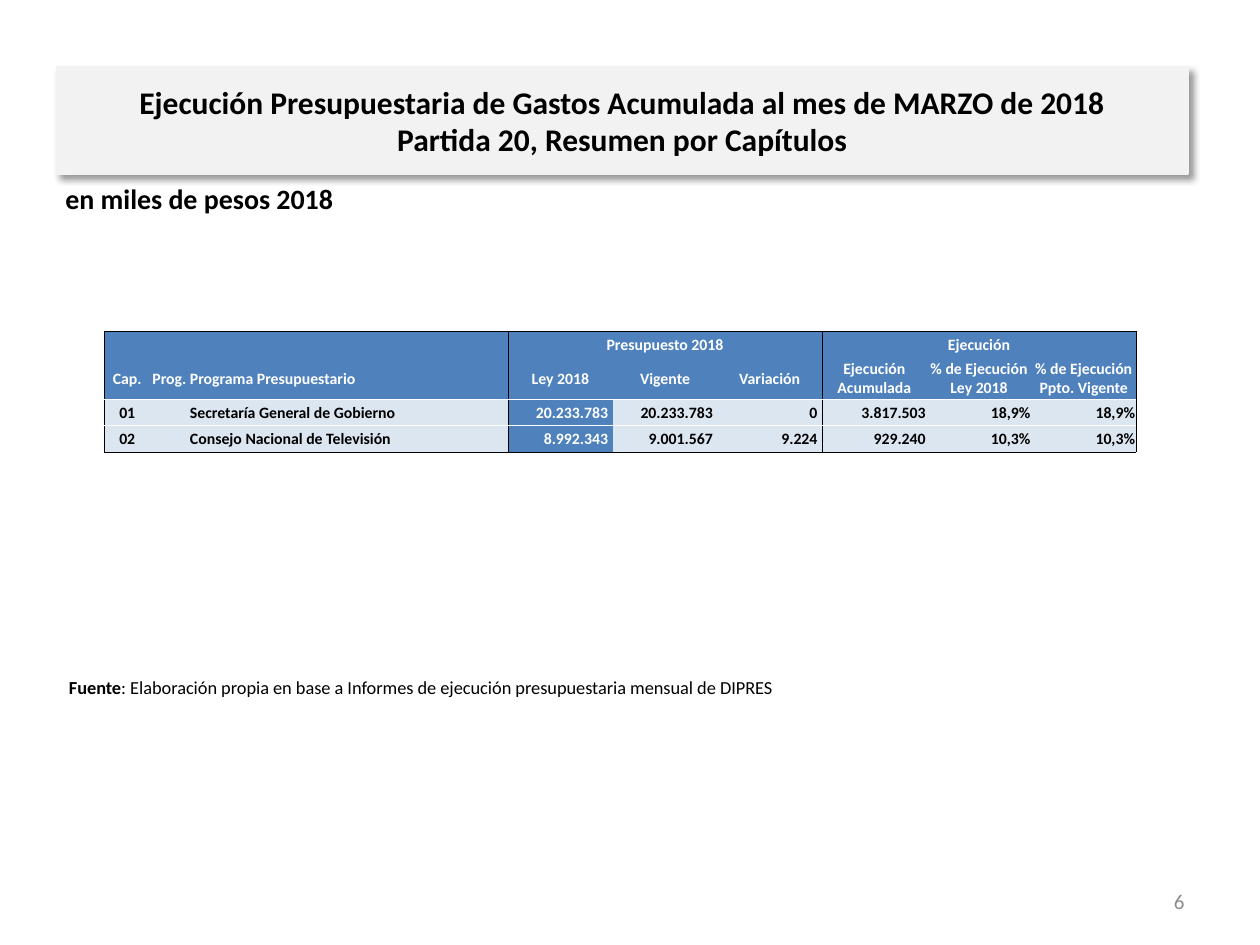
from lxml import etree
from pptx import Presentation
from pptx.dml.color import RGBColor
from pptx.enum.shapes import MSO_SHAPE as Shape
from pptx.enum.text import MSO_ANCHOR as Anchor, PP_ALIGN as Align
from pptx.oxml import parse_xml
from pptx.oxml.ns import nsdecls, qn
from pptx.util import Cm, Pt

FONT = "Calibri"
BLACK, WHITE, GREY = "000000", "FFFFFF", "8C8C8C"
PANEL, BLUE, PALE = "F2F2F2", "4F81BD", "DCE6F1"

COLUMN_WIDTHS = [0.91, 0.79, 6.43] + [2.11] * 6
ROW_HEIGHTS = [0.53, 0.84, 0.53, 0.53]
GROUP_STARTS, GROUP_ENDS = (0, 3, 6), (2, 5, 8)
LAW_COLUMN = 3
ROWS = [
    ["", "", "", "Presupuesto 2018", "", "", "Ejecución", "", ""],
    ["Cap.", "Prog.", "Programa Presupuestario", "Ley 2018", "Vigente", "Variación",
     "Ejecución Acumulada", "% de Ejecución Ley 2018", "% de Ejecución Ppto. Vigente"],
    ["01", "", "Secretaría General de Gobierno", "20.233.783 ", "20.233.783 ", "0 ",
     "3.817.503", "18,9%", "18,9%"],
    ["02", "", "Consejo Nacional de Televisión", "8.992.343 ", "9.001.567 ", "9.224 ",
     "929.240", "10,3%", "10,3%"],
]
HEADER_ROWS = 2


def color(value):
    return RGBColor.from_string(value)


def format_run(run, size, value=BLACK, bold=False):
    run.font.name = FONT
    run.font.size = Pt(size)
    run.font.bold = bold
    run.font.color.rgb = color(value)


def add_title(slide, left, top, width, height):
    shape = slide.shapes.add_shape(Shape.RECTANGLE, Cm(left), Cm(top), Cm(width), Cm(height))
    shape.fill.solid()
    shape.fill.fore_color.rgb = color(PANEL)
    shape.line.color.rgb = color(PANEL)
    shape.line.width = Pt(0.75)
    # Soft shadow towards the lower right
    shape._element.spPr.append(parse_xml(
        f'<a:effectLst {nsdecls("a")}>'
        f'<a:outerShdw blurRad="{Pt(4)}" dist="{Pt(3)}" dir="2700000" algn="tl" rotWithShape="0">'
        f'<a:srgbClr val="{BLACK}"><a:alpha val="40000"/></a:srgbClr>'
        '</a:outerShdw></a:effectLst>'))
    frame = shape.text_frame
    frame.word_wrap = True
    frame.vertical_anchor = Anchor.MIDDLE
    frame.text = ("Ejecución Presupuestaria de Gastos Acumulada al mes de MARZO de 2018\v"
                  "Partida 20, Resumen por Capítulos")
    paragraph = frame.paragraphs[0]
    paragraph.alignment = Align.CENTER
    for run in paragraph.runs:
        format_run(run, 18, bold=True)


def add_label(slide, left, top, width, height, parts, size, value=BLACK,
              align=Align.LEFT, anchor=Anchor.TOP):
    """Place one line of text made of (text, bold) parts."""
    box = slide.shapes.add_textbox(Cm(left), Cm(top), Cm(width), Cm(height))
    frame = box.text_frame
    frame.word_wrap = True
    frame.vertical_anchor = anchor
    paragraph = frame.paragraphs[0]
    paragraph.alignment = align
    for text, bold in parts:
        run = paragraph.add_run()
        run.text = text
        format_run(run, size, value, bold)


def set_borders(cell, row, column):
    last = len(ROWS) - 1
    sides = {
        "lnL": BLACK if column in GROUP_STARTS else None,
        "lnR": BLACK if column in GROUP_ENDS or cell.is_merge_origin else None,
        "lnT": BLACK if row == 0 else WHITE if row >= HEADER_ROWS else None,
        "lnB": BLACK if row == last else WHITE if row > 0 else None,
    }
    properties = cell._tc.get_or_add_tcPr()
    for side, value in sides.items():
        line = etree.SubElement(properties, qn(f"a:{side}"), w=str(Pt(0.5)))
        if value:
            fill = etree.SubElement(line, qn("a:solidFill"))
            etree.SubElement(fill, qn("a:srgbClr"), val=value)
        else:
            etree.SubElement(line, qn("a:noFill"))


def cell_alignment(row, column):
    if column == 2:
        return Align.LEFT if row < HEADER_ROWS else Align.JUSTIFY
    if row < HEADER_ROWS or column < 2:
        return Align.CENTER
    return Align.RIGHT


def fill_cell(cell, row, column, text):
    dark = row < HEADER_ROWS or column == LAW_COLUMN
    set_borders(cell, row, column)
    cell.fill.solid()
    cell.fill.fore_color.rgb = color(BLUE if dark else PALE)
    cell.margin_left = cell.margin_right = cell.margin_top = Cm(0.02)
    cell.margin_bottom = 0
    cell.vertical_anchor = Anchor.MIDDLE
    paragraph = cell.text_frame.paragraphs[0]
    paragraph.alignment = cell_alignment(row, column)
    if text:
        paragraph.text = text
        format_run(paragraph.runs[0], 9, WHITE if dark else BLACK, bold=True)
    else:
        # Keeps an empty cell from stretching its row
        paragraph._p.get_or_add_endParaRPr().set("sz", "900")


def add_budget_table(slide, left, top, width, height):
    table = slide.shapes.add_table(len(ROWS), len(COLUMN_WIDTHS), Cm(left), Cm(top),
                                   Cm(width), Cm(height)).table
    table.first_row = table.horz_banding = False
    for column, size in zip(table.columns, COLUMN_WIDTHS):
        column.width = Cm(size)
    for row, size in zip(table.rows, ROW_HEIGHTS):
        row.height = Cm(size)
    # Group headings span three columns each
    for start in GROUP_STARTS[1:]:
        table.cell(0, start).merge(table.cell(0, start + 2))
    for row, texts in enumerate(ROWS):
        for column, text in enumerate(texts):
            fill_cell(table.cell(row, column), row, column, text)


def main():
    presentation = Presentation()
    presentation.slide_width, presentation.slide_height = Cm(25.4), Cm(19.05)
    slide = presentation.slides.add_slide(presentation.slide_layouts[6])

    add_title(slide, 1.14, 1.35, 22.81, 2.16)
    # Page number
    add_label(slide, 18.2, 17.66, 5.93, 1.01, [("6", False)], 12, GREY,
              Align.RIGHT, Anchor.MIDDLE)
    # Source note
    add_label(slide, 1.14, 13.51, 23.34, 1.01,
              [("Fuente", True),
               (": Elaboración propia en base a Informes de ejecución presupuestaria "
                "mensual de DIPRES", False)], 10.5)
    # Unit of the amounts
    add_label(slide, 1.07, 3.53, 22.86, 1.27, [("en miles de pesos 2018", True)], 16)
    add_budget_table(slide, 2.11, 6.68, sum(COLUMN_WIDTHS), sum(ROW_HEIGHTS))

    presentation.save("out.pptx")


if __name__ == "__main__":
    main()
